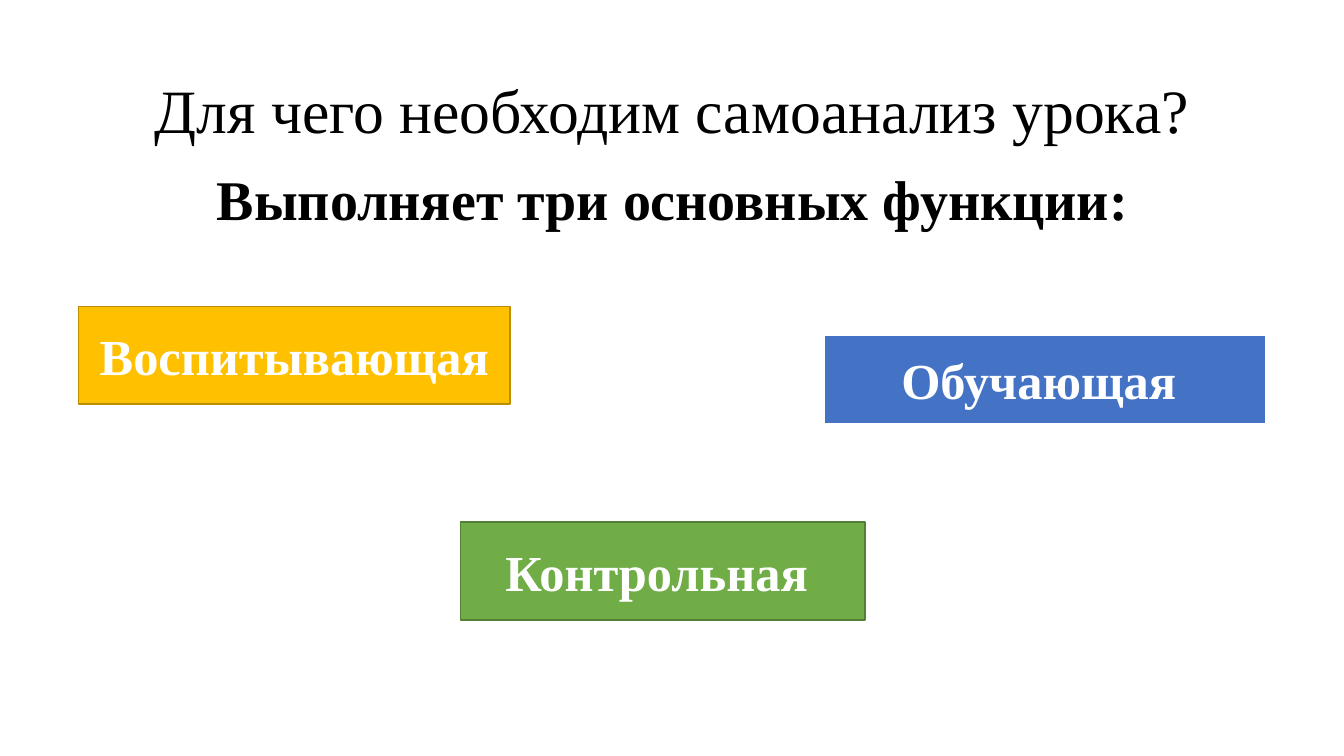
from pptx import Presentation
from pptx import util as u
from pptx.dml.color import RGBColor
from pptx.enum import shapes, text

BLACK = RGBColor(0x00, 0x00, 0x00)
WHITE = RGBColor(0xFF, 0xFF, 0xFF)
GOLD = RGBColor(0xFF, 0xC0, 0x00)
DARK_GOLD = RGBColor(0xBD, 0x8E, 0x00)
GREEN = RGBColor(0x70, 0xAD, 0x47)
DARK_GREEN = RGBColor(0x53, 0x80, 0x35)
BLUE = RGBColor(0x44, 0x72, 0xC4)


class SlideBuilder:
    font = "Times New Roman"

    def __init__(self, s):
        self.s = s

    def set_text(self, sp, words, size, color, bold=False, anchor=text.MSO_ANCHOR.MIDDLE):
        tf = sp.text_frame
        tf.text = words
        tf.word_wrap = True
        tf.auto_size = text.MSO_AUTO_SIZE.NONE
        tf.vertical_anchor = anchor
        p = tf.paragraphs[0]
        p.alignment = text.PP_ALIGN.CENTER
        f = p.runs[0].font
        f.name, f.size, f.bold = self.font, u.Pt(size), bold
        f.color.rgb = color
        return p

    def title(self, words, box):
        sp = self.s.shapes.title
        sp.left, sp.top, sp.width, sp.height = map(u.Inches, box)
        self.set_text(sp, words, 44, BLACK).line_spacing = 0.9

    def subtitle(self, words, box):
        sp = self.s.shapes.add_textbox(*map(u.Inches, box))
        p = self.set_text(sp, words, 40, BLACK, True, text.MSO_ANCHOR.TOP)
        p.line_spacing = 0.9
        p.space_before = u.Pt(10)

    def function_box(self, words, box, fill, line, width):
        sp = self.s.shapes.add_shape(shapes.MSO_SHAPE.RECTANGLE, *map(u.Inches, box))
        sp.shadow.inherit = False
        sp.fill.solid()
        sp.fill.fore_color.rgb = fill
        sp.line.color.rgb = line
        sp.line.width = u.Pt(width)
        self.set_text(sp, words, 36, WHITE, True)


def main():
    prs = Presentation()
    prs.slide_width, prs.slide_height = u.Inches(13.33), u.Inches(7.5)
    slide = SlideBuilder(prs.slides.add_slide(prs.slide_layouts[5]))

    # Heading
    slide.title("Для чего необходим самоанализ урока?", (0.92, 0.4, 11.5, 1.45))
    slide.subtitle("Выполняет три основных функции:", (0.92, 1.66, 11.5, 5.1))

    # Three functions of self-analysis
    functions = [
        ("Воспитывающая", (0.78, 3.04, 4.28, 0.97), GOLD, DARK_GOLD, 1),
        ("Контрольная ", (4.57, 5.18, 4.01, 0.97), GREEN, DARK_GREEN, 1),
        ("Обучающая ", (8.17, 3.32, 4.39, 0.89), BLUE, WHITE, 1.5),
    ]
    for function in functions:
        slide.function_box(*function)

    prs.save("out.pptx")


if __name__ == "__main__":
    main()
